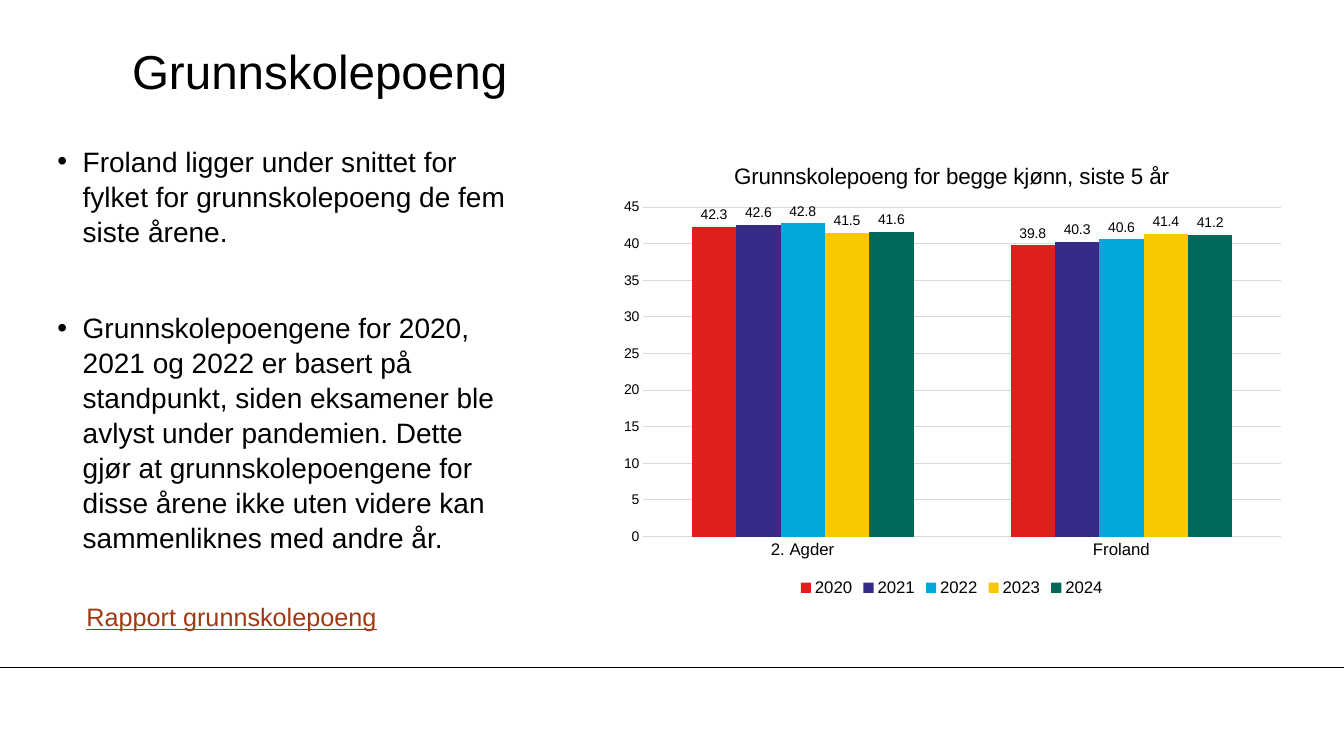
from lxml import etree
from pptx import Presentation
from pptx.chart.data import CategoryChartData
from pptx.dml.color import RGBColor
from pptx.enum.chart import XL_CHART_TYPE, XL_LABEL_POSITION, XL_LEGEND_POSITION, XL_TICK_MARK
from pptx.enum.shapes import MSO_CONNECTOR
from pptx.enum.text import MSO_ANCHOR, MSO_AUTO_SIZE, PP_ALIGN
from pptx.oxml import parse_xml
from pptx.oxml.ns import nsdecls, qn
from pptx.util import Inches, Pt

COLUMN = XL_CHART_TYPE.COLUMN_CLUSTERED
OUTSIDE_END = XL_LABEL_POSITION.OUTSIDE_END
LEGEND_BOTTOM = XL_LEGEND_POSITION.BOTTOM
NO_TICK = XL_TICK_MARK.NONE
STRAIGHT = MSO_CONNECTOR.STRAIGHT
MIDDLE, TOP = MSO_ANCHOR.MIDDLE, MSO_ANCHOR.TOP
NO_FIT, GROW = MSO_AUTO_SIZE.NONE, MSO_AUTO_SIZE.SHAPE_TO_FIT_TEXT
LEFT = PP_ALIGN.LEFT

FONT = "Arial"
COLORS = {
    "text": "000000", "link": "9F3A14", "grid": "D9D9D9",
    "2020": "DF1F1D", "2021": "342C86", "2022": "00A9DA",
    "2023": "FAC800", "2024": "00695A",
}
BULLETS = [
    "Froland ligger under snittet for fylket for grunnskolepoeng de fem siste årene.",
    "Grunnskolepoengene for 2020, 2021 og 2022 er basert på standpunkt, siden "
    "eksamener ble avlyst under pandemien. Dette gjør at grunnskolepoengene for "
    "disse årene ikke uten videre kan sammenliknes med andre år.",
]
AREAS = ["2. Agder", "Froland"]
POINTS = {
    "2020": (42.3, 39.8),
    "2021": (42.6, 40.3),
    "2022": (42.8, 40.6),
    "2023": (41.5, 41.4),
    "2024": (41.6, 41.2),
}


class SlideBuilder:
    def __init__(self, slide):
        self.slide = slide

    def color(self, name):
        return RGBColor.from_string(COLORS[name])

    def style_font(self, font, size, color="text"):
        font.name, font.size, font.bold = FONT, Pt(size), False
        font.color.rgb = self.color(color)

    def place(self, shape, left, top, width, height):
        shape.left, shape.top = Inches(left), Inches(top)
        shape.width, shape.height = Inches(width), Inches(height)

    def prepare_frame(self, shape, anchor):
        frame = shape.text_frame
        frame.margin_left = frame.margin_right = frame.margin_top = frame.margin_bottom = 0
        frame.word_wrap, frame.auto_size = True, NO_FIT
        frame.vertical_anchor = anchor
        return frame

    def title(self, text, box, size):
        shape = self.slide.shapes.title
        self.place(shape, *box)
        frame = self.prepare_frame(shape, MIDDLE)
        frame.text = text
        frame.paragraphs[0].alignment = LEFT
        self.style_font(frame.paragraphs[0].runs[0].font, size)

    def bullets(self, texts, box, size, gap):
        shape = self.slide.placeholders[1]
        self.place(shape, *box)
        frame = self.prepare_frame(shape, TOP)
        frame.text = "\n".join(texts)
        for index, paragraph in enumerate(frame.paragraphs):
            properties = paragraph._p.get_or_add_pPr()
            properties.set("marL", str(Inches(0.25)))
            properties.set("indent", str(-Inches(0.25)))
            etree.SubElement(properties, qn("a:buChar")).set("char", "•")
            paragraph.space_before = Pt(gap if index else 0)
            paragraph.line_spacing = 1.04
            self.style_font(paragraph.runs[0].font, size)

    def link_text(self, text, box, size):
        shape = self.slide.shapes.add_textbox(*map(Inches, box))
        frame = shape.text_frame
        frame.word_wrap, frame.auto_size = True, GROW
        frame.text = text
        font = frame.paragraphs[0].runs[0].font
        self.style_font(font, size, "link")
        font.underline = True

    def rule(self, left, right, top):
        line = self.slide.shapes.add_connector(
            STRAIGHT, Inches(left), Inches(top), Inches(right), Inches(top))
        line.line.color.rgb, line.line.width = self.color("text"), Pt(0.75)
        etree.SubElement(line._element.spPr, qn("a:effectLst"))

    def column_chart(self, title, categories, series_values, box):
        data = CategoryChartData(number_format="0.0")
        data.categories = categories
        for name, values in series_values.items():
            data.add_series(name, values)
        chart = self.slide.shapes.add_chart(COLUMN, *map(Inches, box), data).chart
        self.style_font(chart.font, 10)

        # Title and legend
        chart.has_title = True
        chart.chart_title.text_frame.text = title
        self.style_font(chart.chart_title.text_frame.paragraphs[0].runs[0].font, 16)
        chart.chart_title.include_in_layout = False
        chart.has_legend = True
        chart.legend.position = LEGEND_BOTTOM
        chart.legend.include_in_layout = False
        self.style_font(chart.legend.font, 12)

        # Axes
        category_axis, value_axis = chart.category_axis, chart.value_axis
        for axis, size in ((category_axis, 12), (value_axis, 10)):
            axis.major_tick_mark = axis.minor_tick_mark = NO_TICK
            self.style_font(axis.tick_labels.font, size)
        value_axis.minimum_scale, value_axis.maximum_scale = 0, 45
        value_axis.major_unit = 5
        value_axis.tick_labels.number_format = "0"
        value_axis.tick_labels.number_format_is_linked = False
        value_axis.format.line.fill.background()
        for line in (category_axis.format.line, value_axis.major_gridlines.format.line):
            line.color.rgb, line.width = self.color("grid"), Pt(0.75)

        # Columns and their values
        plot = chart.plots[0]
        plot.gap_width, plot.overlap, plot.vary_by_categories = 219, 0, False
        for series in plot.series:
            series.format.fill.solid()
            series.format.fill.fore_color.rgb = self.color(series.name)
            labels = series.data_labels
            labels.show_value, labels.position = True, OUTSIDE_END
            labels.number_format, labels.number_format_is_linked = "0.0", False
            self.style_font(labels.font, 10)
        self.place_plot(chart, x=0.05, y=0.14, w=0.93, h=0.72)

    def place_plot(self, chart, **fractions):
        area = chart._chartSpace.chart.plotArea
        for old_layout in area.findall(qn("c:layout")):
            area.remove(old_layout)
        sizes = "".join(f'<c:{key} val="{value}"/>' for key, value in fractions.items())
        area.insert(0, parse_xml(
            f'<c:layout {nsdecls("c")}><c:manualLayout><c:layoutTarget val="inner"/>'
            f'<c:xMode val="edge"/><c:yMode val="edge"/>{sizes}</c:manualLayout></c:layout>'))


def main():
    presentation = Presentation()
    presentation.slide_width, presentation.slide_height = Inches(13.33), Inches(7.5)
    builder = SlideBuilder(presentation.slides.add_slide(presentation.slide_layouts[1]))

    # Footer rule
    builder.rule(0, 13.33, 6.62)

    # Text column
    builder.title("Grunnskolepoeng", (1.31, 0.32, 11.1, 0.75), 34)
    builder.bullets(BULLETS, (0.57, 1.42, 4.58, 4.3), 20, 44)
    builder.link_text("Rapport grunnskolepoeng", (0.76, 5.92, 3.3, 0.4), 18)

    # Chart
    builder.column_chart("Grunnskolepoeng for begge kjønn, siste 5 år",
                         AREAS, POINTS, (6.04, 1.42, 6.8, 4.54))
    presentation.save("out.pptx")


if __name__ == "__main__":
    main()
